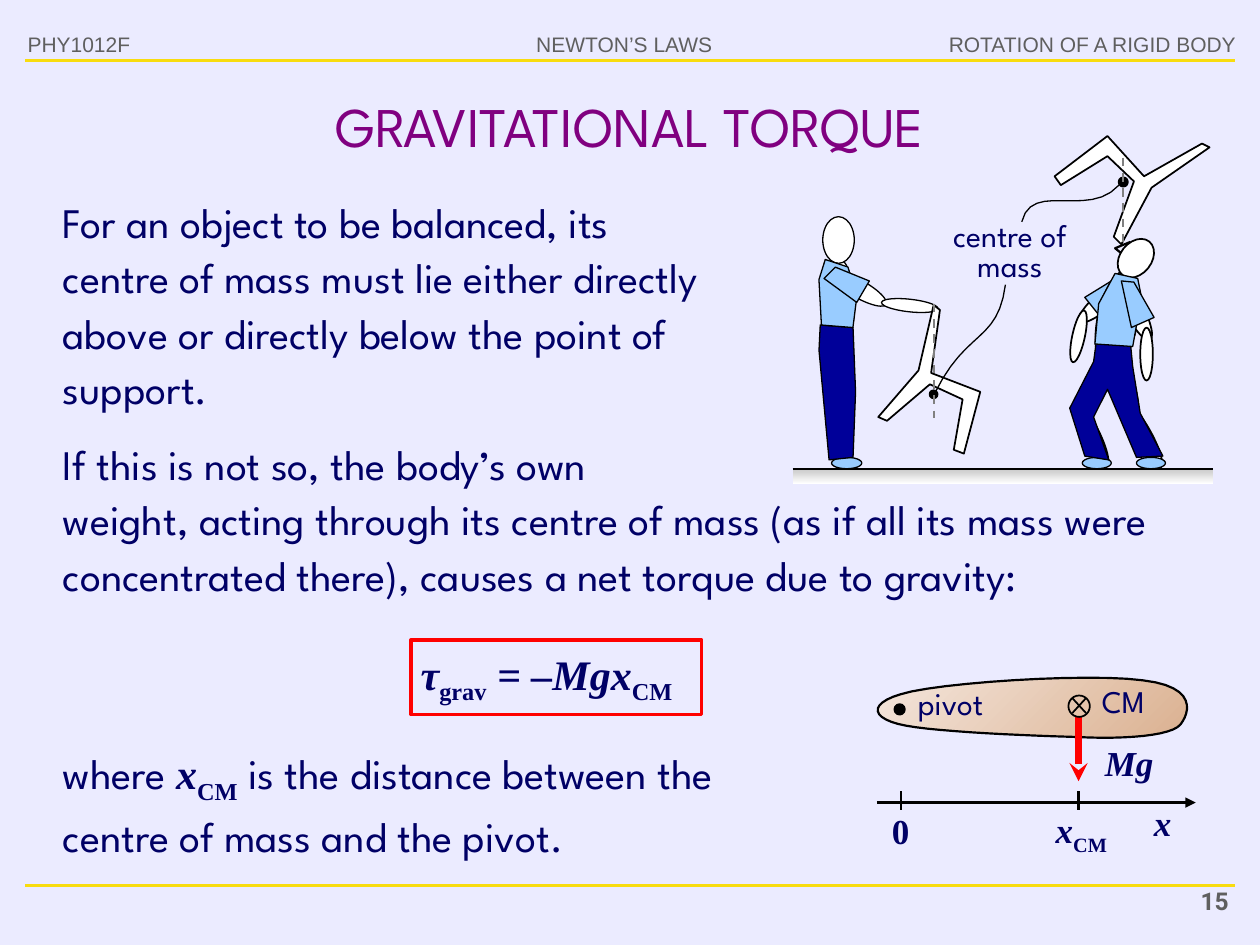
import pptx
import pptx.util
import pptx.dml.color
import pptx.enum.dml
import pptx.enum.shapes
import pptx.enum.text
import pptx.oxml.ns
import lxml.etree

Inches, Pt = pptx.util.Inches, pptx.util.Pt
SHAPE = pptx.enum.shapes.MSO_SHAPE
ALIGN = pptx.enum.text.PP_ALIGN
ANCHOR = pptx.enum.text.MSO_ANCHOR

COLORS = {
    "back": "EBEBFF", "rule": "F8DC0E", "head": "5F5F5F", "title": "800080",
    "text": "000066", "black": "000000", "white": "FFFFFF", "shirt": "99CCFF",
    "pants": "000099", "red": "FF0000", "dash": "808080", "sand": "F4E6DC",
    "clay": "DBB191", "floor": "C8C8C8",
}
SANS, SERIF, HEAD = "League Spartan", "Times New Roman", "Arial"
SUB = {"sub": True, "italic": False}

# Each style: font, size, colour, bold, italic, line spacing, left margin
STYLES = {
    "head": (HEAD, 12, "head", False, False, 1, 0),
    "page": ("Roboto", 14, "head", True, False, 1, 0),
    "title": (SANS, 32, "title", False, False, 1, 0),
    "body": (SANS, 24, "text", False, False, 1.1, 0.2),
    "label": (SANS, 18, "text", False, False, 0.8, 0),
    "formula": (SERIF, 24, "text", True, True, 1.1, 0.2),
    "symbol": (SERIF, 20, "text", True, True, 1.1, 0.2),
}

# Each text: style, box, alignment, runs as (words, changes)
HEADS = [
    ("head", (4.15, 0.2, 1.61, 0.3), "CENTER", [("NEWTON’S LAWS", {})]),
    ("head", (7.38, 0.2, 2.53, 0.3), "RIGHT", [("ROTATION OF A RIGID BODY", {})]),
    ("head", (0.12, 0.2, 1.18, 0.32), "LEFT", [("PHY1012F", {})]),
    ("page", (8.82, 6.98, 1.03, 0.37), "RIGHT", [("15", {})]),
    ("title", (0.5, 0.63, 9, 0.72), "CENTER", [("GRAVITATIONAL TORQUE", {})]),
]
BODY = [
    ("body", (0.2, 1.47, 5.55, 1.86), "LEFT", [
        ("For an object to be balanced, its centre of mass must lie either directly "
         "above or directly below the point of support.", {})]),
    ("body", (0.2, 3.39, 9.47, 1.86), "LEFT", [
        ("If this is not so, the body’s own", {}), ("\n", {}),
        ("weight, acting through its centre of mass (as if all its mass were "
         "concentrated there), causes a net torque due to gravity:", {})]),
    ("formula", (3.04, 5.05, 2.54, 0.55), "LEFT", [
        ("τ", {}), ("grav", SUB), (" = –Mgx", {}), ("CM", SUB)]),
    ("body", (0.2, 5.84, 6, 0.98), "LEFT", [
        ("where ", {}),
        ("x", {"name": SERIF, "bold": True, "italic": True}),
        ("CM", {"name": SERIF, "bold": True, "sub": True}),
        (" is the distance between the centre of mass and the pivot.", {})]),
]
LABELS = [
    ("label", (7.36, 1.72, 1.31, 0.58), "CENTER", [("centre of mass", {})]),
    ("label", (7.01, 5.44, 1.07, 0.34), "CENTER", [("pivot", {})]),
    ("label", (8.44, 5.42, 0.95, 0.35), "CENTER", [("CM", {})]),
    ("symbol", (8.47, 5.8, 0.8, 0.47), "LEFT", [("Mg", {})]),
    ("symbol", (6.78, 6.34, 0.56, 0.47), "LEFT", [("0", {"italic": False})]),
    ("symbol", (8.08, 6.33, 0.92, 0.45), "LEFT", [("x", {}), ("CM", SUB)]),
    ("symbol", (8.86, 6.28, 0.58, 0.47), "LEFT", [("x", {})]),
]

# Parts, back to front: (kind, geometry, fill, line colour, line width, extra)
# oval and rect: left, top, width, height, turn; poly and open: points; line: ends
RULES = [("line", [(0.2, y), (9.8, y)], None, "rule", 1.75) for y in (0.48, 7.03)]
THROWN = [
    ("poly", [(9.6, 1.17), (9.14, 1.49), (8.9, 1.94), (8.84, 1.88), (9, 1.44), (8.79, 1.24),
              (8.42, 1.47), (8.37, 1.4), (8.79, 1.08), (9.08, 1.4), (9.54, 1.14)],
     "white", "black", 1),
    ("oval", (8.88, 1.41, 0.07, 0.07, 0), "black", "black", 1.25),
    ("line", [(8.91, 1.25), (8.91, 1.92)], None, "dash", 1.25, "dash"),
]
JUGGLER = [
    ("oval", (8.51, 2.32, 0.49, 0.14, 319.2), "white", "black", 1),
    ("poly", [(8.98, 2.28), (8.73, 2.51), (8.61, 2.36), (8.87, 2.2)], "shirt", "black", 0.75),
    *[("oval", box, "white", "black", 1) for box in (
        (8.8, 3.4, 0.56, 0.13, 241.8), (8.56, 2.94, 0.68, 0.19, 252.4),
        (8.71, 2.14, 0.32, 0.8, 11.5), (8.35, 2.62, 0.42, 0.1, 282.2),
        (8.38, 3.38, 0.56, 0.13, 243.6), (8.89, 1.88, 0.25, 0.34, 38.7))],
    *[("oval", (x, 3.63, 0.23, 0.09, 0), "shirt", "black", 0.75) for x in (8.59, 9.02)],
    *[("oval", box, "white", "black", 1) for box in (
        (8.37, 2.94, 0.68, 0.18, 301.1), (8.77, 2.41, 0.49, 0.14, 242.7),
        (8.89, 2.76, 0.42, 0.1, 270))],
    ("open", [(8.97, 1.92), (8.85, 1.97), (8.9, 2.01)], None, "black", 1.25),
    ("poly", [(8.97, 2.7), (8.7, 2.72), (8.68, 2.87), (8.49, 3.24), (8.61, 3.62), (8.8, 3.65),
              (8.68, 3.31), (8.79, 3.09), (9.02, 3.63), (9.23, 3.62), (9.05, 3.28),
              (8.99, 2.91)], "pants", "black", 0.75),
    ("poly", [(9.03, 2.21), (9.06, 2.36), (8.99, 2.75), (8.69, 2.73), (8.72, 2.41),
              (8.85, 2.17)], "shirt", "black", 0.75),
    ("poly", [(9, 2.24), (9.16, 2.52), (8.98, 2.6), (8.9, 2.23)], "shirt", "black", 0.75),
]
HOLDER = [
    *[("oval", box, "white", "black", 0.75) for box in (
        (6.52, 2.05, 0.26, 0.75, 0), (6.55, 2.63, 0.19, 0.66, 0),
        (6.53, 1.72, 0.25, 0.37, 0), (6.58, 3.21, 0.15, 0.47, 0))],
    ("oval", (6.6, 3.63, 0.24, 0.09, 0), "shirt", "black", 0.75),
    ("poly", [(6.51, 2.58), (6.77, 2.6), (6.79, 3.11), (6.77, 3.63), (6.58, 3.65),
              (6.5, 2.78)], "pants", "black", 0.75),
    ("poly", [(6.55, 2.06), (6.5, 2.22), (6.52, 2.58), (6.77, 2.6), (6.8, 2.36),
              (6.73, 2.12)], "shirt", "black", 0.75),
    ("oval", (6.75, 2.05, 0.14, 0.49, 299.4), "white", "black", 0.75),
    ("oval", (7.17, 2.2, 0.1, 0.45, 276.2), "white", "black", 0.75),
    ("poly", [(6.54, 2.21), (6.8, 2.4), (6.9, 2.23), (6.63, 2.12)], "shirt", "black", 0.75),
]
HUNG = [
    ("poly", [(7.41, 2.42), (7.29, 2.94), (6.97, 3.31), (7.04, 3.34), (7.38, 3.05),
              (7.64, 3.17), (7.57, 3.57), (7.65, 3.6), (7.78, 3.11), (7.39, 2.96),
              (7.46, 2.46)], "white", "black", 1),
    ("oval", (7.38, 3.1, 0.06, 0.06, 0), "black", "black", 1.25),
    ("line", [(7.41, 2.41), (7.41, 3.32)], None, "dash", 1.25, "dash"),
]


def curve(pts, steps=12):
    """Points along joined cubic Bezier curves."""
    out = [pts[0]]
    for n in range(0, len(pts) - 1, 3):
        quad = pts[n:n + 4]
        for k in range(1, steps + 1):
            t = k / steps
            mix = ((1 - t) ** 3, 3 * t * (1 - t) ** 2, 3 * t * t * (1 - t), t ** 3)
            out.append(tuple(sum(m * p[i] for m, p in zip(mix, quad)) for i in (0, 1)))
    return out


LEADS = [("open", curve(pts), None, "black", 0.75) for pts in (
    [(7.98, 2.26), (7.92, 2.72), (7.67, 2.61), (7.42, 3.12)],
    [(8.88, 1.47), (8.64, 1.74), (8.19, 1.43), (8.11, 1.76)])]
GROUND = [
    ("rect", (6.29, 3.72, 3.34, 0.12, 0), ("floor", "white", 90), None, 0),
    ("line", [(6.29, 3.72), (9.63, 3.72)], None, "black", 1),
]
CLUB = [
    ("poly", curve([(7.15, 5.51), (6.88, 5.59), (6.92, 5.71), (7.19, 5.76), (7.46, 5.81),
                    (8.17, 5.84), (8.55, 5.85), (8.93, 5.87), (9.3, 5.84), (9.37, 5.75),
                    (9.44, 5.66), (9.51, 5.45), (9.07, 5.4), (8.63, 5.34), (7.43, 5.42),
                    (7.15, 5.51)]), ("sand", "clay", 45), "black", 1.25),
    ("oval", (7.1, 5.59, 0.08, 0.08, 0), "black", "black", 1.25),
]
FRAME = [("rect", (3.26, 5.08, 2.31, 0.59, 0), None, "red", 2)]
WEIGHT = [("line", [(8.56, 5.68), (8.56, 6.2)], None, "red", 3.5, "stealth")]
AXIS = [
    ("line", [(6.96, 6.37), (9.49, 6.37)], None, "black", 1.25, "triangle"),
    *[("line", [(x, 6.28), (x, 6.43)], None, "black", 1.25) for x in (7.15, 8.56)],
]
CENTRE = [
    ("oval", (8.48, 5.52, 0.17, 0.17, 0), None, "black", 1),
    *[("line", [(a, 5.66), (b, 5.54)], None, "black", 1)
      for a, b in ((8.51, 8.62), (8.62, 8.51))],
]


def rgb(name):
    return pptx.dml.color.RGBColor.from_string(COLORS[name])


def paint(shape, fill):
    if fill is None:
        shape.fill.background()
    elif isinstance(fill, tuple):
        shape.fill.gradient()
        shape.fill.gradient_angle = (360 - fill[2]) % 360
        for stop, name in zip(shape.fill.gradient_stops, fill):
            stop.color.rgb = rgb(name)
    else:
        shape.fill.solid()
        shape.fill.fore_color.rgb = rgb(fill)


def draw(shapes, kind, geo, fill, ink, width, extra=None):
    if kind == "line":
        ends = [Inches(v) for point in geo for v in point]
        item = shapes.add_connector(pptx.enum.shapes.MSO_CONNECTOR.STRAIGHT, *ends)
        lxml.etree.SubElement(item._element.spPr, pptx.oxml.ns.qn("a:effectLst"))
    else:
        if kind in ("poly", "open"):
            pts = [(Inches(x), Inches(y)) for x, y in geo]
            pen = shapes.build_freeform(*pts[0], scale=1.0)
            pen.add_line_segments(pts[1:], close=kind == "poly")
            item = pen.convert_to_shape()
        else:
            form = SHAPE.OVAL if kind == "oval" else SHAPE.RECTANGLE
            item = shapes.add_shape(form, *map(Inches, geo[:4]))
            item.rotation = geo[4]
        item.shadow.inherit = False
        paint(item, fill)
    if ink is None:
        item.line.fill.background()
        return
    item.line.color.rgb = rgb(ink)
    item.line.width = Pt(width)
    if extra == "dash":
        item.line.dash_style = pptx.enum.dml.MSO_LINE.DASH
    elif extra:
        tail = lxml.etree.SubElement(item.line._get_or_add_ln(), pptx.oxml.ns.qn("a:tailEnd"))
        tail.set("type", extra)


def write(shapes, style, box, align, runs):
    face, size, ink, bold, italic, space, left = STYLES[style]
    frame = shapes.add_textbox(*map(Inches, box)).text_frame
    frame.word_wrap = style != "head"
    if style == "title":
        frame.vertical_anchor = ANCHOR.MIDDLE
    para = frame.paragraphs[0]
    para.alignment = ALIGN[align]
    para.line_spacing = space
    if left:
        props = para._p.get_or_add_pPr()
        props.set("marL", str(Inches(left)))
        props.set("indent", "0")
    font = para.font
    font.name, font.size, font.bold, font.italic = face, Pt(size), bold, italic
    font.color.rgb = rgb(ink)
    for words, change in runs:
        if words == "\n":
            para.add_line_break()
            continue
        run = para.add_run()
        run.text = words
        for key, value in change.items():
            if key == "sub":
                run._r.get_or_add_rPr().set("baseline", "-25000")
            else:
                setattr(run.font, key, value)


def main():
    deck = pptx.Presentation()
    deck.slide_width, deck.slide_height = Inches(10), Inches(7.5)
    slide = deck.slides.add_slide(deck.slide_layouts[6])
    slide.background.fill.solid()
    slide.background.fill.fore_color.rgb = rgb("back")
    for parts in (RULES, CLUB, THROWN, JUGGLER, HOLDER, HUNG, LEADS, GROUND,
                  FRAME, WEIGHT, AXIS, CENTRE):
        shapes = slide.shapes.add_group_shape().shapes if len(parts) > 2 else slide.shapes
        for part in parts:
            draw(shapes, *part)
    for text in HEADS + BODY + LABELS:
        write(slide.shapes, *text)
    deck.save("out.pptx")


if __name__ == "__main__":
    main()
